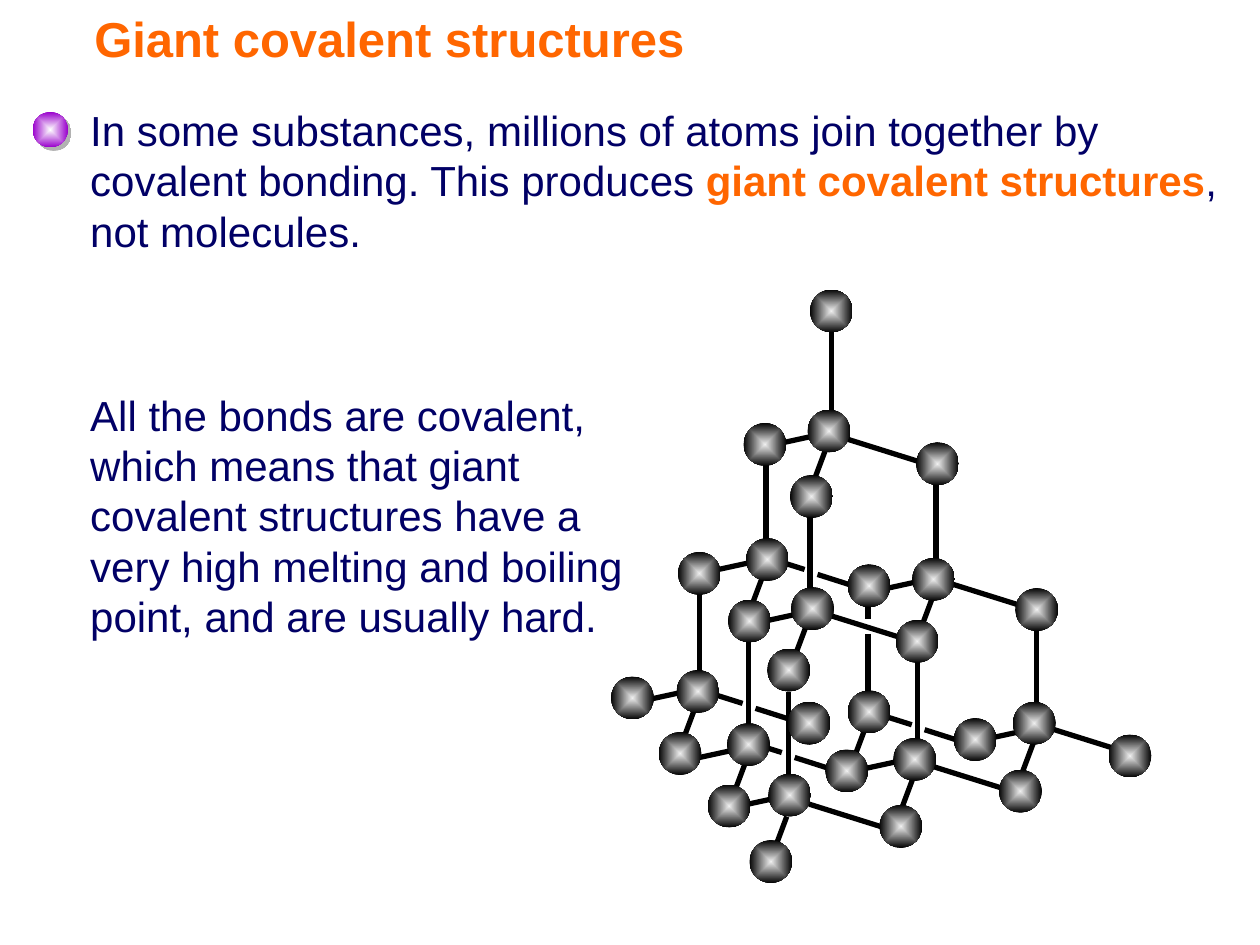
from lxml.etree import SubElement
from pptx import Presentation
from pptx.dml.color import RGBColor
from pptx.enum.shapes import MSO_CONNECTOR as CONN, MSO_SHAPE as SHAPE
from pptx.enum.text import MSO_ANCHOR as ANCHOR, PP_ALIGN as ALIGN
from pptx.oxml.ns import qn
from pptx.util import Cm, Pt

ORANGE = RGBColor(0xFF, 0x66, 0x00)
NAVY = RGBColor(0x01, 0x00, 0x66)
PURPLE = RGBColor(0x99, 0x00, 0xCC)
WHITE = RGBColor(0xFF, 0xFF, 0xFF)
PALE = RGBColor(0xEF, 0xEF, 0xEF)
SILVER = RGBColor(0xB2, 0xB2, 0xB2)
BLACK = RGBColor(0x00, 0x00, 0x00)

ATOM_SIZE = 0.86
ATOMS = [
    (16.33, 5.84), (13.67, 11.13), (15.04, 10.85), (15.93, 9.58), (14.99, 8.53),
    (17.09, 11.38), (18.47, 8.92), (16.28, 8.26), (18.39, 11.25), (20.47, 11.86),
    (20.14, 15.52), (20.42, 14.15), (22.35, 14.81), (15.95, 11.84), (14.68, 12.09),
    (12.32, 13.64), (13.64, 13.51), (14.27, 15.82), (15.49, 15.6), (17.09, 13.92),
    (16.64, 15.11), (17.73, 16.23), (19.23, 14.48), (15.47, 13.08), (13.28, 14.76),
    (14.66, 14.58), (15.88, 14.15), (18.01, 14.88), (18.06, 12.5), (15.11, 16.94),
]

UPRIGHT = [(0, 0, 0, 1.68)]
RISING = [(0, 0, 0.6, -0.13)]
STEEP = [(0, 0, 0.21, -0.56)]
FALLING = [(0, 0, 1.5, 0.47)]
BROKEN_FALLING = [(0, 0, 0.57, 0.18), (0.83, 0.28, 1.52, 0.5)]
BROKEN_UPRIGHT = [(0, 0, 0, 0.36), (0, 0.66, 0, 1.88)]
BONDS = [
    (UPRIGHT, [(16.76, 6.68), (15.44, 9.35), (18.87, 9.73), (16.33, 10.41), (14.1, 11.94),
               (15.09, 12.95), (15.9, 13.94), (18.49, 13.34), (20.9, 12.67)]),
    (RISING, [(15.8, 8.92), (14.48, 11.48), (15.42, 12.52), (13.08, 14.1), (17.45, 15.49),
              (19.96, 14.88), (14.99, 16.23), (14.1, 15.27), (17.88, 11.86)]),
    (STEEP, [(16.43, 9.63), (15.16, 12.19), (18.59, 12.6), (13.79, 14.86), (14.81, 15.95),
             (15.65, 17.02), (18.19, 16.26), (20.62, 15.54), (17.22, 15.27), (16.03, 13.21)]),
    (FALLING, [(17.04, 8.84), (19.15, 11.76), (16.71, 12.4), (16.31, 16.21), (18.77, 15.44),
               (21.16, 14.68)]),
    (BROKEN_FALLING, [(14.4, 14), (15.65, 11.3), (17.81, 14.43), (15.19, 14.99)]),
    (BROKEN_UPRIGHT, [(17.5, 12.12)]),
]


def add_run(p, text, size=24, color=NAVY, bold=False, font="Arial"):
    r = p.add_run()
    r.text = text
    r.font.name = font
    r.font.size = Pt(size)
    r.font.bold = bold
    r.font.color.rgb = color


class Deck:
    def __init__(self, slide):
        self.s = slide
        self.bond_width = Pt(3)

    def title(self, text, x, y, w, h, indent):
        sp = self.s.shapes.title
        sp.left, sp.top, sp.width, sp.height = Cm(x), Cm(y), Cm(w), Cm(h)
        tf = sp.text_frame
        tf.margin_left = Cm(indent)
        tf.vertical_anchor = ANCHOR.MIDDLE
        p = tf.paragraphs[0]
        p.alignment = ALIGN.LEFT
        add_run(p, text, size=28, color=ORANGE, bold=True)

    def text(self, runs, x, y, w, h):
        tf = self.s.shapes.add_textbox(Cm(x), Cm(y), Cm(w), Cm(h)).text_frame
        tf.word_wrap = True
        for text, style in runs:
            add_run(tf.paragraphs[0], text, **style)

    def ball(self, shapes, x, y, size, center, edge):
        sp = shapes.add_shape(SHAPE.OVAL, Cm(x), Cm(y), Cm(size), Cm(size))
        sp.shadow.inherit = False
        sp.line.fill.background()
        sp.fill.gradient()
        for stop, color in zip(sp.fill.gradient_stops, (center, edge)):
            stop.color.rgb = color
        grad = sp.element.spPr.find(qn("a:gradFill"))
        grad.remove(grad.find(qn("a:lin")))
        focus = SubElement(grad, qn("a:path"), {"path": "shape"})
        SubElement(focus, qn("a:fillToRect"), dict.fromkeys("ltrb", "50000"))
        return sp

    def bullet(self, x, y, size):
        sp = self.ball(self.s.shapes, x, y, size, WHITE, PURPLE)
        effects = sp.element.spPr.find(qn("a:effectLst"))
        shadow = SubElement(effects, qn("a:outerShdw"),
                            {"dist": str(Pt(2.8)), "dir": "2700000", "algn": "ctr", "rotWithShape": "0"})
        SubElement(shadow, qn("a:srgbClr"), {"val": str(SILVER)})

    def bond(self, shapes, x1, y1, x2, y2):
        line = shapes.add_connector(CONN.STRAIGHT, Cm(x1), Cm(y1), Cm(x2), Cm(y2))
        line.line.color.rgb = BLACK
        line.line.width = self.bond_width
        SubElement(line.element.spPr, qn("a:effectLst"))

    def lattice(self, bonds, atoms):
        shapes = self.s.shapes.add_group_shape().shapes
        for pieces, starts in bonds:
            for x, y in starts:
                for x1, y1, x2, y2 in pieces:
                    self.bond(shapes, x + x1, y + y1, x + x2, y + y2)
        for x, y in atoms:
            self.ball(shapes, x, y, ATOM_SIZE, PALE, BLACK).rotation = 358.9


def main():
    prs = Presentation()
    prs.slide_width, prs.slide_height = Cm(25.4), Cm(19.05)
    deck = Deck(prs.slides.add_slide(prs.slide_layouts[5]))
    deck.title("Giant covalent structures", 0, 0, 18.11, 1.52, indent=1.9)
    deck.bullet(0.66, 2.26, 0.71)
    deck.text([
        ("In some substances, millions of atoms join together by covalent bonding. This produces ", {}),
        ("giant covalent structures", {"color": ORANGE, "bold": True}),
        (", not molecules.", {}),
    ], 1.57, 1.98, 23.83, 3.3)
    deck.lattice(BONDS, ATOMS)
    deck.text([
        ("All the bonds are covalent, which means that giant covalent structures have a "
         "very high melting and boiling point, and are usually hard.", {}),
    ], 1.57, 7.72, 11.58, 5.33)
    prs.save("out.pptx")


if __name__ == "__main__":
    main()
